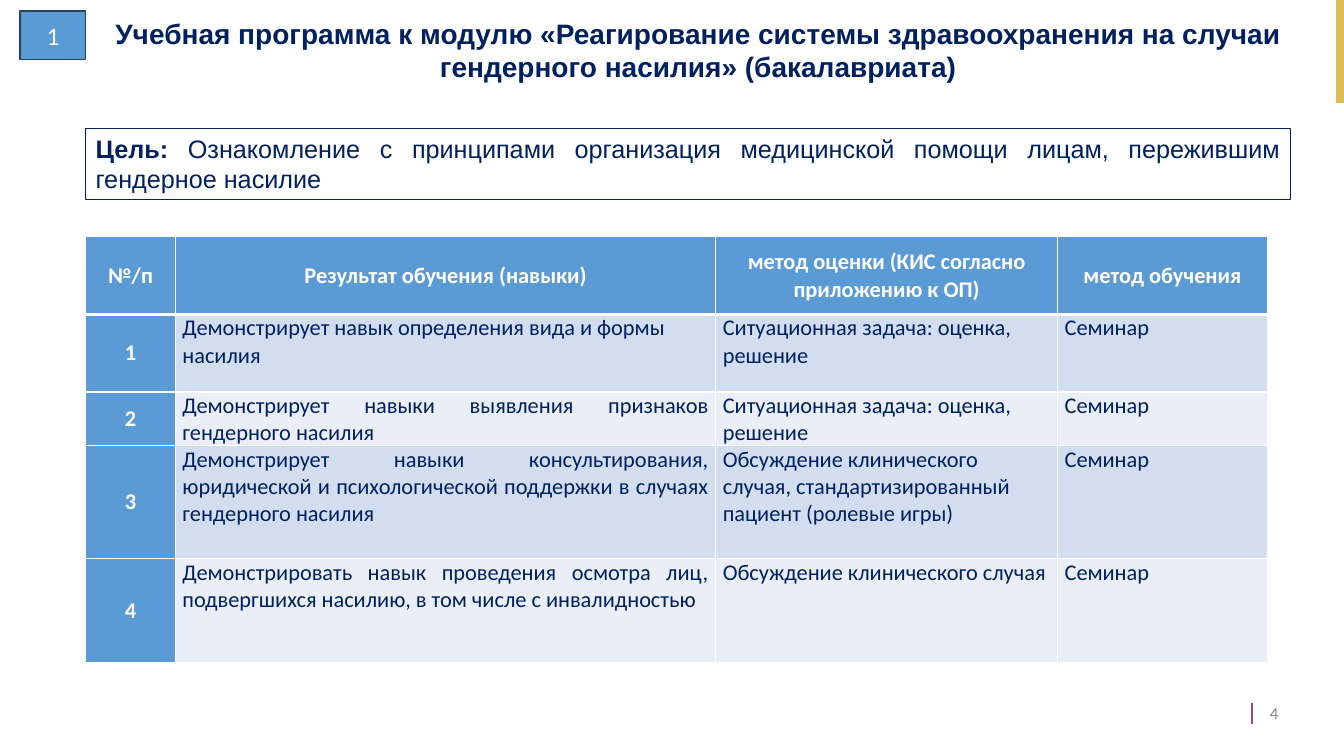
from dataclasses import dataclass

from lxml import etree
from pptx import Presentation
from pptx import util as u
from pptx.dml.color import RGBColor
from pptx.enum import shapes, text
from pptx.oxml.ns import qn

NUMBER = "1"
PAGE = "4"
TITLE = ("Учебная программа к модулю «Реагирование системы здравоохранения "
         "на случаи гендерного насилия» (бакалавриата)")
GOAL_LABEL = "Цель: "
GOAL = ("Ознакомление с принципами организация медицинской помощи лицам, "
        "пережившим гендерное насилие")
HEADER = ("№/п", "Результат обучения (навыки)",
          "метод оценки (КИС согласно приложению к ОП)", "метод обучения")
OUTCOMES = [
    ("Демонстрирует навык определения вида и формы насилия",
     "Ситуационная задача: оценка, решение", "Семинар"),
    ("Демонстрирует навыки выявления признаков гендерного насилия",
     "Ситуационная задача: оценка, решение", "Семинар"),
    ("Демонстрирует навыки консультирования, юридической и психологической "
     "поддержки в случаях гендерного насилия",
     "Обсуждение клинического случая, стандартизированный пациент (ролевые игры)",
     "Семинар"),
    ("Демонстрировать навык проведения осмотра лиц, подвергшихся насилию, "
     "в том числе с инвалидностью",
     "Обсуждение клинического случая", "Семинар"),
]
COLUMNS = (0.89, 5.36, 3.39, 2.08)
ROWS = (0.77, 0.77, 0.53, 1.12, 1.03)
WIDTH, HEIGHT = 13.33, 7.5
LEFT, TOP = 0.85, 0.11


@dataclass(frozen=True)
class Theme:
    navy: str = "002060"
    blue: str = "5B9BD5"
    blue_edge: str = "28445D"
    white: str = "FFFFFF"
    bands: tuple = ("D2DEEF", "EAEFF7")
    gold: str = "DBBE56"
    plum: str = "8B4D80"
    grey: str = "888888"
    heading_font: str = "Arial"
    body_font: str = "Calibri"
    title: int = 20
    goal: int = 18
    table: int = 16
    page: int = 12


THEME = Theme()
ALIGN = text.PP_ALIGN
MIDDLE = text.MSO_ANCHOR.MIDDLE


def add_run(paragraph, words, size, color, font=THEME.body_font, bold=False):
    run = paragraph.add_run()
    run.text = words
    run.font.size = u.Pt(size)
    run.font.name = font
    run.font.bold = bold
    run.font.color.rgb = RGBColor.from_string(color)


def add_box(slide, box, fill=None, line=None, width=1):
    shape = slide.shapes.add_shape(shapes.MSO_SHAPE.RECTANGLE, *map(u.Inches, box))
    shape.shadow.inherit = False
    if fill:
        shape.fill.solid()
        shape.fill.fore_color.rgb = RGBColor.from_string(fill)
    else:
        shape.fill.background()
    if line:
        shape.line.color.rgb = RGBColor.from_string(line)
        shape.line.width = u.Pt(width)
    else:
        shape.line.fill.background()
    return shape


def first_paragraph(shape, align, anchor=text.MSO_ANCHOR.TOP):
    frame = shape.text_frame
    frame.word_wrap = True
    frame.vertical_anchor = anchor
    frame.paragraphs[0].alignment = align
    return frame.paragraphs[0]


def set_borders(cell, **widths):
    """Draw white edges; they must stand before the fill in the cell's XML."""
    properties = cell._tc.get_or_add_tcPr()
    for index, side in enumerate("LRTB"):
        line = etree.Element(qn(f"a:ln{side}"), w=str(u.Pt(widths.get(side, 1))))
        fill = etree.SubElement(line, qn("a:solidFill"))
        etree.SubElement(fill, qn("a:srgbClr"), val=THEME.white)
        properties.insert(index, line)


def add_header(slide):
    title = slide.shapes.add_textbox(*map(u.Inches, (LEFT, TOP, 12.15, 0.77)))
    add_run(first_paragraph(title, ALIGN.CENTER), TITLE, THEME.title, THEME.navy,
            THEME.heading_font, True)
    goal = add_box(slide, (LEFT, 1.27, 11.95, 0.71), line=THEME.navy, width=0.75)
    paragraph = first_paragraph(goal, ALIGN.JUSTIFY)
    for words, bold in ((GOAL_LABEL, True), (GOAL, False)):
        add_run(paragraph, words, THEME.goal, THEME.navy, THEME.heading_font, bold)
    badge = add_box(slide, (0.2, TOP, LEFT - 0.2, 0.48), THEME.blue, THEME.blue_edge)
    add_run(first_paragraph(badge, ALIGN.CENTER, MIDDLE), NUMBER, THEME.goal, THEME.white)


def add_outcomes(slide):
    grid = [HEADER] + [(str(n), *row) for n, row in enumerate(OUTCOMES, 1)]
    table = slide.shapes.add_table(
        len(ROWS), len(COLUMNS),
        *map(u.Inches, (LEFT, 2.35, sum(COLUMNS), sum(ROWS)))).table
    for column, width in zip(table.columns, COLUMNS):
        column.width = u.Inches(width)
    for row, height in zip(table.rows, ROWS):
        row.height = u.Inches(height)
    for r, row in enumerate(grid):
        for c, words in enumerate(row):
            cell = table.cell(r, c)
            heading = r == 0 or c == 0
            cell.margin_left = cell.margin_right = u.Inches(0.07)
            cell.margin_top = cell.margin_bottom = 0
            cell.fill.solid()
            cell.fill.fore_color.rgb = RGBColor.from_string(
                THEME.blue if heading else THEME.bands[(r - 1) % 2])
            paragraph = cell.text_frame.paragraphs[0]
            if heading:
                cell.vertical_anchor = MIDDLE
                paragraph.alignment = ALIGN.CENTER
            else:
                paragraph.alignment = ALIGN.JUSTIFY if c == 1 and r > 1 else ALIGN.LEFT
            add_run(paragraph, words, THEME.table,
                    THEME.white if heading else THEME.navy, bold=heading)
            set_borders(cell, T=3 if r == 1 else 1, B=3 if r == 0 else 1)


def add_page_marks(slide):
    add_box(slide, (WIDTH - 0.08, 0, 0.08, 1.02), THEME.gold)
    page = slide.shapes.add_textbox(*map(u.Inches, (9.61, 6.97, 3.07, 0.2)))
    frame = page.text_frame
    frame.margin_left = frame.margin_right = frame.margin_top = frame.margin_bottom = 0
    add_run(first_paragraph(page, ALIGN.RIGHT), PAGE, THEME.page, THEME.grey)
    rule = slide.shapes.add_connector(
        shapes.MSO_CONNECTOR.STRAIGHT, *map(u.Inches, (12.42, 6.97, 12.42, 7.18)))
    rule.line.color.rgb = RGBColor.from_string(THEME.plum)
    rule.line.width = u.Pt(1.5)
    etree.SubElement(rule._element.spPr, qn("a:effectLst"))


def main():
    presentation = Presentation()
    presentation.slide_width, presentation.slide_height = map(u.Inches, (WIDTH, HEIGHT))
    slide = presentation.slides.add_slide(presentation.slide_layouts[6])
    add_page_marks(slide)
    add_header(slide)
    add_outcomes(slide)
    presentation.save("out.pptx")


if __name__ == "__main__":
    main()
